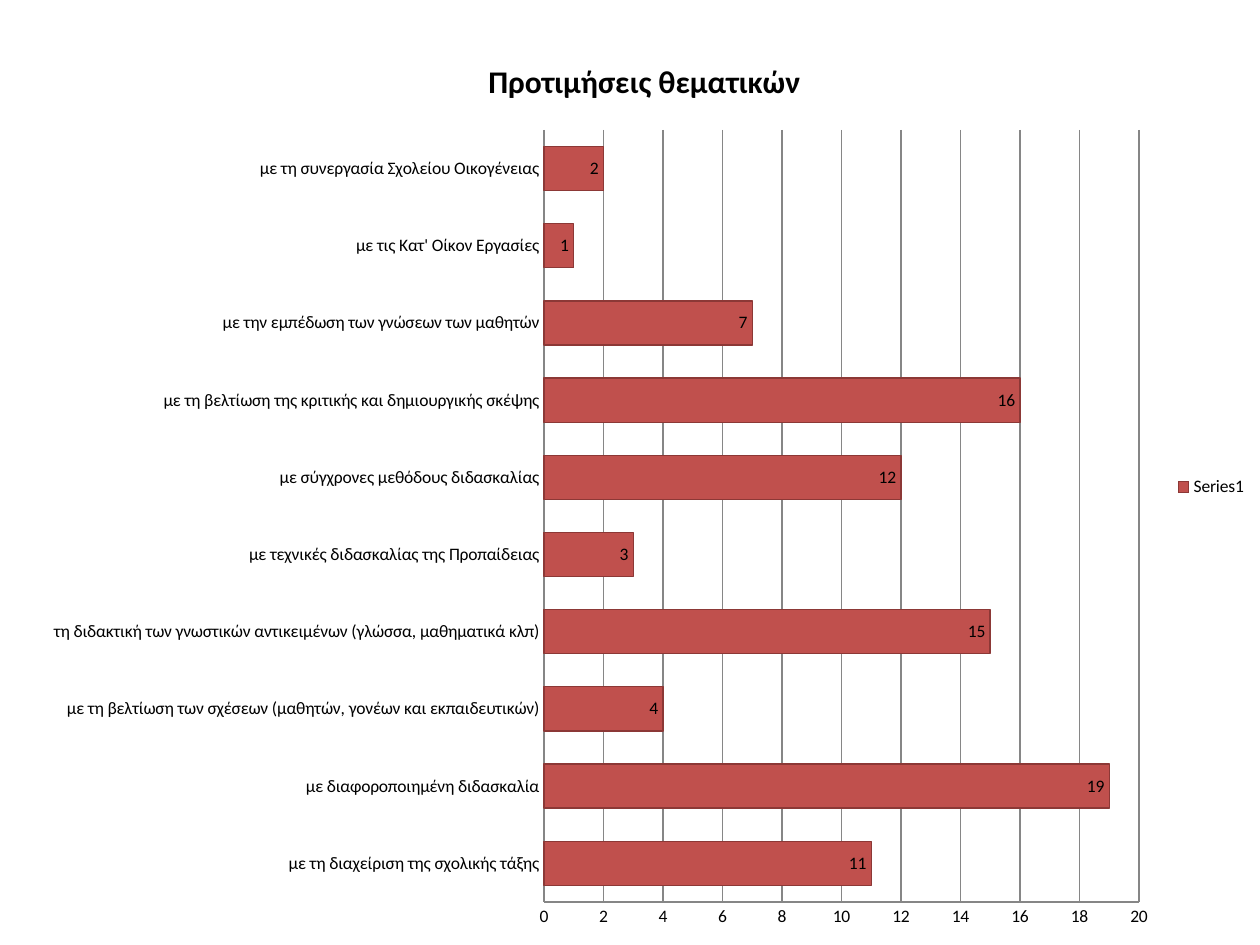
import pptx
import pptx.chart.data
import pptx.dml.color
import pptx.enum.chart
import pptx.oxml
import pptx.oxml.ns
import pptx.util
from dataclasses import dataclass

PX = 914400 // 126  # EMU in one px
SLIDE = (1260, 945)
CHART = (29, 29, 1231, 916)  # left, top, width, height
PLOT = (544, 130, 595, 772)

TITLE = "Προτιμήσεις θεματικών"
PREFERENCES = [
    ("με τη διαχείριση της σχολικής τάξης", 11),
    ("με διαφοροποιημένη διδασκαλία", 19),
    ("με τη βελτίωση των σχέσεων (μαθητών, γονέων και εκπαιδευτικών)", 4),
    ("τη διδακτική των γνωστικών αντικειμένων (γλώσσα, μαθηματικά κλπ)", 15),
    ("με τεχνικές διδασκαλίας της Προπαίδειας", 3),
    ("με σύγχρονες μεθόδους διδασκαλίας", 12),
    ("με τη βελτίωση της κριτικής και δημιουργικής σκέψης", 16),
    ("με την εμπέδωση των γνώσεων των μαθητών", 7),
    ("με τις Κατ' Οίκον Εργασίες", 1),
    ("με τη συνεργασία Σχολείου Οικογένειας", 2),
]


@dataclass(frozen=True)
class Theme:
    font: str = "Calibri"
    text: str = "000000"
    bar: str = "C0504D"
    bar_line: str = "8C3836"
    grid: str = "868686"
    title_pt: int = 18
    body_pt: int = 10


THEME = Theme()


def px(n):
    return pptx.util.Emu(n * PX)


def rgb(value):
    return pptx.dml.color.RGBColor.from_string(value)


def style_font(font, size, bold=False):
    font.name = THEME.font
    font.size = pptx.util.Pt(size)
    font.bold = bold
    font.color.rgb = rgb(THEME.text)


def style_line(line, color):
    line.color.rgb = rgb(color)
    line.width = pptx.util.Pt(0.75)


def add_bar_chart(s):
    data = pptx.chart.data.CategoryChartData()
    data.categories = [name for name, _ in PREFERENCES]
    data.add_series("Series1", [count for _, count in PREFERENCES])
    kind = pptx.enum.chart.XL_CHART_TYPE.BAR_CLUSTERED
    chart = s.shapes.add_chart(kind, *map(px, CHART), data).chart
    style_font(chart.font, THEME.body_pt)
    return chart


def set_title(chart):
    tf = chart.chart_title.text_frame
    p = tf.paragraphs[0]
    p.text = TITLE
    style_font(p.font, THEME.title_pt, bold=True)
    chart.chart_title.include_in_layout = False


def set_legend(chart):
    chart.has_legend = True
    chart.legend.position = pptx.enum.chart.XL_LEGEND_POSITION.RIGHT
    chart.legend.include_in_layout = False


def style_bars(chart):
    plot = chart.plots[0]
    plot.vary_by_categories = False
    plot.gap_width = 75
    plot.overlap = 40
    series = plot.series[0]
    series.format.fill.solid()
    series.format.fill.fore_color.rgb = rgb(THEME.bar)
    style_line(series.format.line, THEME.bar_line)
    labels = series.data_labels
    labels.show_value = True
    labels.position = pptx.enum.chart.XL_LABEL_POSITION.INSIDE_END
    style_font(labels.font, THEME.body_pt)


def style_axes(chart):
    for axis in (chart.category_axis, chart.value_axis):
        axis.major_tick_mark = pptx.enum.chart.XL_TICK_MARK.NONE
        axis.minor_tick_mark = pptx.enum.chart.XL_TICK_MARK.NONE
        style_font(axis.tick_labels.font, THEME.body_pt)
        style_line(axis.format.line, THEME.grid)
    axis = chart.value_axis
    axis.minimum_scale, axis.maximum_scale, axis.major_unit = 0, 20, 2
    axis.has_major_gridlines = True
    style_line(axis.major_gridlines.format.line, THEME.grid)


def place_plot(chart):
    """Fix the inner plot area as shares of the chart frame."""
    left, top, width, height = CHART
    x, y, w, h = PLOT
    shares = {"x": (x - left) / width, "y": (y - top) / height,
              "w": w / width, "h": h / height}
    modes = "".join(f'<c:{k}Mode val="edge"/>' for k in "xy")
    sizes = "".join(f'<c:{k} val="{v:.4f}"/>' for k, v in shares.items())
    layout = pptx.oxml.parse_xml(
        f'<c:layout {pptx.oxml.ns.nsdecls("c")}><c:manualLayout>'
        f'<c:layoutTarget val="inner"/>{modes}{sizes}</c:manualLayout></c:layout>')
    area = chart.plots[0]._element.getparent()
    for old in area.findall(pptx.oxml.ns.qn("c:layout")):
        area.remove(old)
    area.insert(0, layout)


def main():
    prs = pptx.Presentation()
    prs.slide_width, prs.slide_height = pptx.util.Inches(10), pptx.util.Inches(7.5)
    s = prs.slides.add_slide(prs.slide_layouts[6])

    # Chart with its title and legend
    chart = add_bar_chart(s)
    set_title(chart)
    set_legend(chart)

    # Bars, axes and plot area
    style_bars(chart)
    style_axes(chart)
    place_plot(chart)

    prs.save("out.pptx")


if __name__ == "__main__":
    main()
